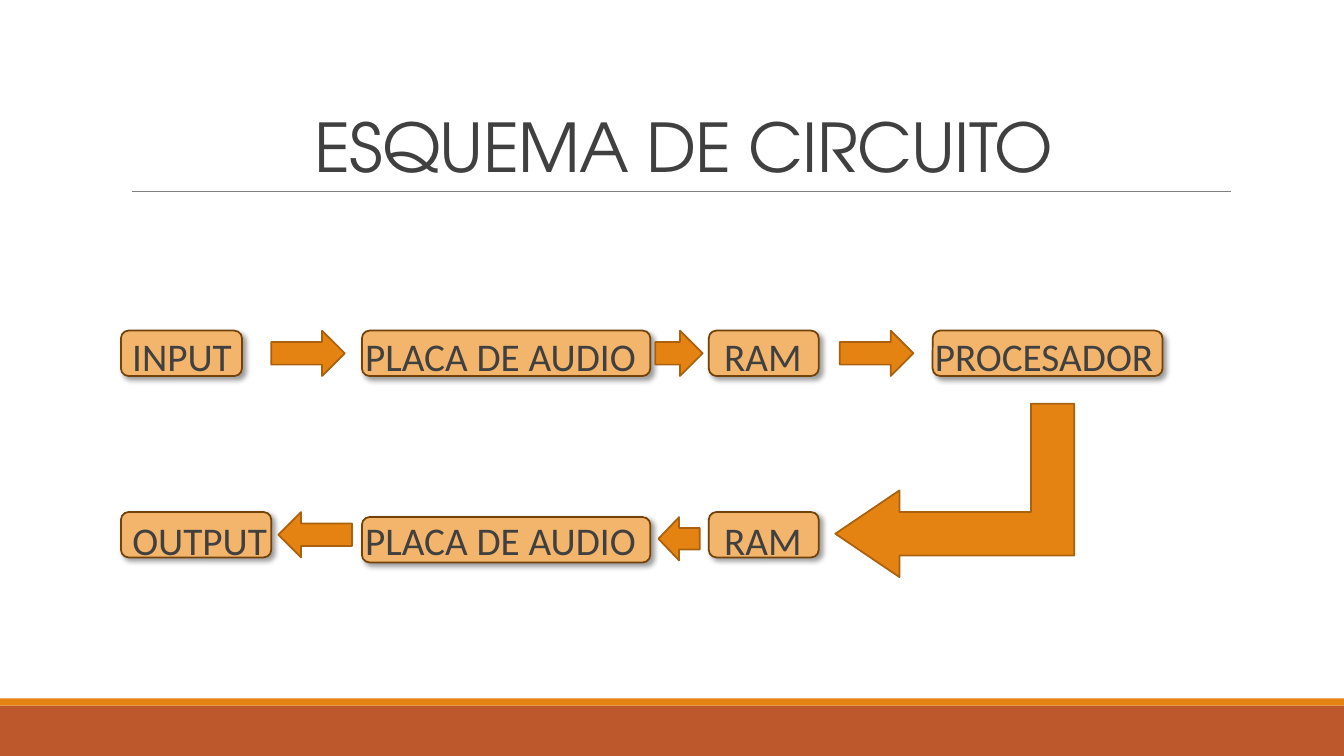
from lxml.etree import SubElement
from pptx import Presentation
from pptx.dml.color import RGBColor
from pptx.enum.shapes import MSO_CONNECTOR, MSO_SHAPE
from pptx.enum.text import MSO_ANCHOR, MSO_AUTO_SIZE, PP_ALIGN
from pptx.oxml.ns import qn
from pptx.util import Inches, Pt

COLORS = {
    "text": "404040",
    "stage": "F3B56C",
    "stage_line": "724209",
    "orange": "E48312",
    "arrow_line": "A9610D",
    "rust": "BD582C",
    "rule": "808080",
    "shadow": "000000",
}
ROW_HEIGHT = 0.45
ROUND_INSET = 0.02
INPUT_TOP = 3.28
OUTPUT_TOP = 5.08
INPUT_TEXT_TOP = 3.35
OUTPUT_TEXT_TOP = 5.17

STAGES = [
    ("INPUT", 1.2, INPUT_TOP, 1.2, 0.11, INPUT_TEXT_TOP),
    ("PLACA DE AUDIO", 3.59, INPUT_TOP, 2.86, 0.03, INPUT_TEXT_TOP),
    ("RAM", 7.03, INPUT_TOP, 1.09, 0.15, INPUT_TEXT_TOP),
    ("PROCESADOR", 9.25, INPUT_TOP, 2.28, 0.02, INPUT_TEXT_TOP),
    ("RAM", 7.03, OUTPUT_TOP, 1.09, 0.15, OUTPUT_TEXT_TOP),
    ("PLACA DE AUDIO", 3.59, 5.13, 2.86, 0.03, OUTPUT_TEXT_TOP),
    ("OUTPUT", 1.2, OUTPUT_TOP, 1.49, 0.11, OUTPUT_TEXT_TOP),
]
ARROWS = [
    (2.69, INPUT_TOP, 0.73, ROW_HEIGHT, 0),
    (6.5, INPUT_TOP, 0.47, ROW_HEIGHT, 0),
    (8.33, INPUT_TOP, 0.73, ROW_HEIGHT, 0),
    (6.53, 5.13, 0.41, 0.43, 180),
    (2.76, OUTPUT_TOP, 0.73, ROW_HEIGHT, 180),
]


def rgb(name):
    return RGBColor.from_string(COLORS[name])


def apply(target, values):
    for attribute, value in values.items():
        setattr(target, attribute, value)


def add_block(slide, preset, box, fill, line=None):
    block = slide.shapes.add_shape(preset, *map(Inches, box))
    block.shadow.inherit = False
    block.fill.solid()
    block.fill.fore_color.rgb = rgb(fill)
    if line:
        block.line.color.rgb = rgb(line)
        block.line.width = Pt(1.25)
    else:
        block.line.fill.background()
    return block


def add_shadow(block):
    effects = block._element.spPr.find(qn("a:effectLst"))
    shadow = SubElement(effects, qn("a:outerShdw"), blurRad=str(Pt(4)),
                        dist=str(Pt(3)), dir=str(45 * 60000), rotWithShape="0")
    color = SubElement(shadow, qn("a:srgbClr"), val=COLORS["shadow"])
    SubElement(color, qn("a:alpha"), val="40000")


def add_stage(slide, label, left, top, width, indent, text_top):
    stage = add_block(slide, MSO_SHAPE.ROUNDED_RECTANGLE,
                      (left, top, width, ROW_HEIGHT), "stage", "stage_line")
    add_shadow(stage)
    frame = stage.text_frame
    apply(frame, {
        "text": label,
        "word_wrap": True,
        "vertical_anchor": MSO_ANCHOR.TOP,
        "margin_left": Inches(indent - ROUND_INSET),
        "margin_top": Inches(text_top - top - ROUND_INSET),
        "margin_right": 0,
        "margin_bottom": 0,
    })
    paragraph = frame.paragraphs[0]
    apply(paragraph, {"alignment": PP_ALIGN.LEFT, "line_spacing": 0.9})
    apply(paragraph.font, {"name": "Calibri", "size": Pt(28)})
    paragraph.font.color.rgb = rgb("text")


def add_arrow(slide, left, top, width, height, rotation):
    arrow = add_block(slide, MSO_SHAPE.RIGHT_ARROW, (left, top, width, height),
                      "orange", "arrow_line")
    arrow.rotation = rotation


def add_return_arrow(slide):
    arrow = add_block(slide, MSO_SHAPE.BENT_UP_ARROW, (8.61, 3.68, 1.72, 2.37),
                      "orange", "arrow_line")
    for index, value in enumerate((0.25, 0.25, 0.37)):
        arrow.adjustments[index] = value
    arrow.rotation = 270
    arrow._element.spPr.find(qn("a:xfrm")).set("flipH", "1")


def add_rule(slide):
    rule = slide.shapes.add_connector(
        MSO_CONNECTOR.STRAIGHT, *map(Inches, (1.31, 1.9, 12.21, 1.9)))
    rule.line.color.rgb = rgb("rule")
    rule.line.width = Pt(0.5)
    SubElement(rule._element.spPr, qn("a:effectLst"))


def set_title(slide):
    title = slide.shapes.title
    apply(title, {"left": Inches(1.28), "top": Inches(0.31),
                  "width": Inches(11), "height": Inches(1.59)})
    apply(title.text_frame, {
        "text": "ESQUEMA DE CIRCUITO",
        "word_wrap": True,
        "auto_size": MSO_AUTO_SIZE.NONE,
        "vertical_anchor": MSO_ANCHOR.BOTTOM,
    })
    paragraph = title.text_frame.paragraphs[0]
    apply(paragraph, {"alignment": PP_ALIGN.CENTER, "line_spacing": 0.85})
    font = paragraph.runs[0].font
    apply(font, {"name": "TeX Gyre Adventor", "size": Pt(48)})
    font.color.rgb = rgb("text")
    paragraph.runs[0]._r.get_or_add_rPr().set("spc", "-50")


def main():
    deck = Presentation()
    apply(deck, {"slide_width": Inches(13.33), "slide_height": Inches(7.5)})
    slide = deck.slides.add_slide(deck.slide_layouts[5])
    add_block(slide, MSO_SHAPE.RECTANGLE, (0, 7, 13.33, 0.5), "rust")
    add_block(slide, MSO_SHAPE.RECTANGLE, (0, 6.93, 13.33, 0.07), "orange")
    add_rule(slide)
    set_title(slide)
    for stage in STAGES:
        add_stage(slide, *stage)
    for arrow in ARROWS:
        add_arrow(slide, *arrow)
    add_return_arrow(slide)
    deck.save("out.pptx")


if __name__ == "__main__":
    main()
